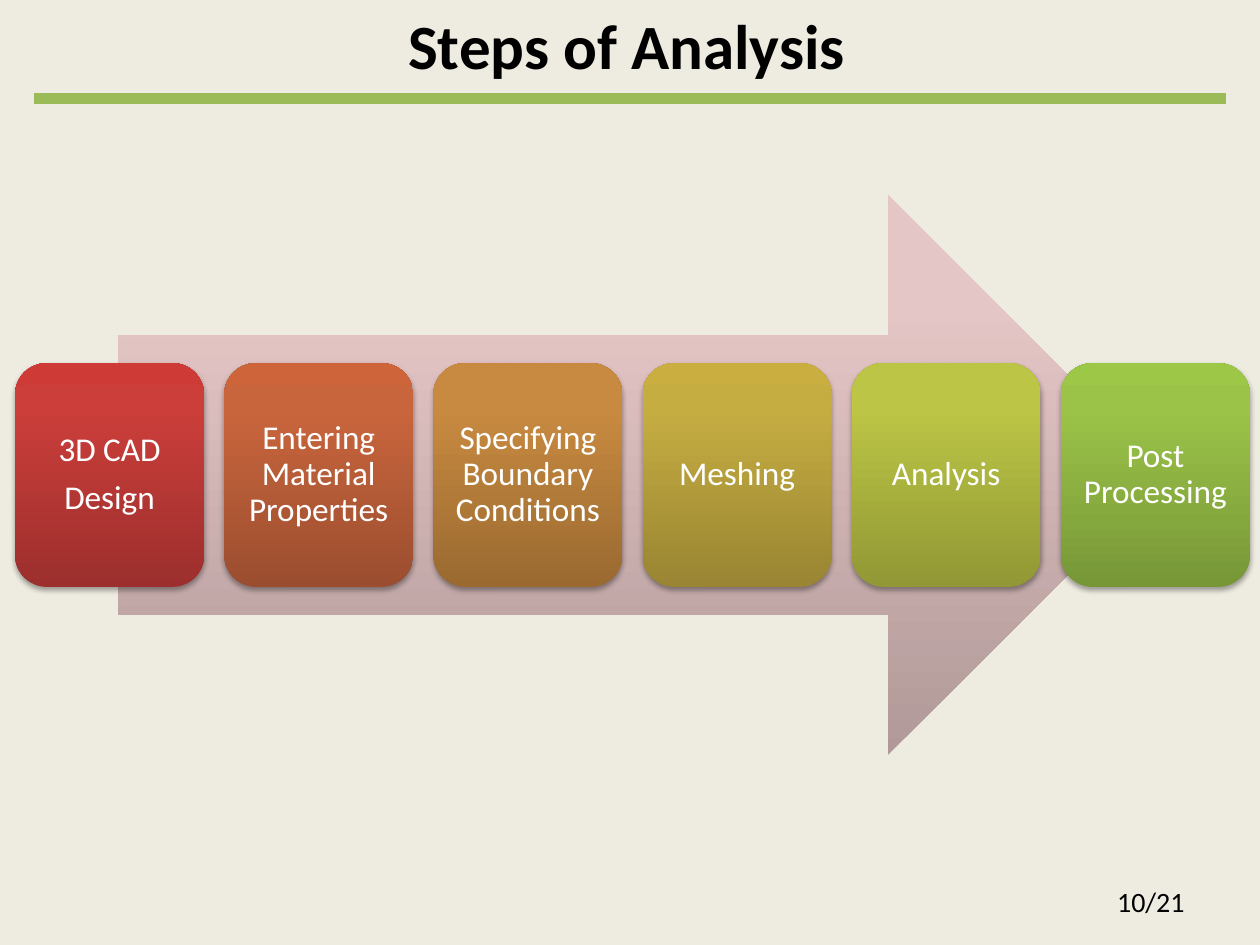
import pptx
import pptx.util
import pptx.dml.color
import pptx.enum.shapes
import pptx.enum.text
import pptx.oxml
import pptx.oxml.ns

Inches, Pt = pptx.util.Inches, pptx.util.Pt
SHAPES = pptx.enum.shapes.MSO_SHAPE
ALIGN = pptx.enum.text.PP_ALIGN
ANCHOR = pptx.enum.text.MSO_ANCHOR

WIDTH, HEIGHT = 10, 7.5
STEPS = [
    (["3D CAD", "Design"], ["9C2F2D", "CB3E3A", "CE3B37"]),
    (["Entering Material Properties"], ["9B4E2F", "C9653D", "CD643A"]),
    (["Specifying Boundary Conditions"], ["9A6A31", "C88A40", "CB8B3D"]),
    (["Meshing"], ["998533", "C6AD42", "CAAF40"]),
    (["Analysis"], ["919835", "BCC545", "BFC843"]),
    (["Post Processing"], ["779737", "9BC348", "9DC746"]),
]


def rgb(hex_code):
    return pptx.dml.color.RGBColor.from_string(hex_code)


def add_run(paragraph, text, size, color, bold=False):
    run = paragraph.add_run()
    run.text = text
    run.font.name = "Calibri"
    run.font.size = Pt(size)
    run.font.bold = bold
    run.font.color.rgb = rgb(color)


def drawing_xml(body):
    return pptx.oxml.parse_xml(body.replace(">", f" {pptx.oxml.ns.nsdecls('a')}>", 1))


def fill_upward(shape, colors):
    """Fill with a three-stop gradient that runs from bottom to top."""
    stops = "".join(
        f'<a:gs pos="{share * 1000}"><a:srgbClr val="{color}"/></a:gs>'
        for share, color in zip((0, 80, 100), colors)
    )
    gradient = drawing_xml(
        f'<a:gradFill rotWithShape="1"><a:gsLst>{stops}</a:gsLst>'
        '<a:lin ang="16200000" scaled="0"/></a:gradFill>'
    )
    shape._element.spPr.find(pptx.oxml.ns.qn("a:prstGeom")).addnext(gradient)
    shape.line.fill.background()
    shape.shadow.inherit = False


def add_soft_shadow(shape):
    effects = shape._element.spPr.find(pptx.oxml.ns.qn("a:effectLst"))
    effects.append(drawing_xml(
        f'<a:outerShdw blurRad="{Pt(3.1)}" dist="{Pt(1.8)}" dir="5400000" rotWithShape="0">'
        '<a:srgbClr val="000000"><a:alpha val="35000"/></a:srgbClr></a:outerShdw>'
    ))


def add_header(slide, left, top, width, height):
    title = slide.shapes.title
    title.left, title.top = Inches(left), Inches(top)
    title.width, title.height = Inches(width), Inches(height)
    frame = title.text_frame
    frame.auto_size = pptx.enum.text.MSO_AUTO_SIZE.NONE
    frame.vertical_anchor = ANCHOR.TOP
    frame.paragraphs[0].alignment = ALIGN.CENTER
    frame.paragraphs[0].space_before = Pt(0)
    add_run(frame.paragraphs[0], "Steps of Analysis", 36, "000000", bold=True)

    baseline = Inches(top + height)
    rule = slide.shapes.add_connector(
        pptx.enum.shapes.MSO_CONNECTOR.STRAIGHT,
        Inches(left), baseline, Inches(WIDTH - left), baseline)
    rule.line.color.rgb = rgb("9BBB59")
    rule.line.width = Pt(6)
    rule._element.spPr.append(drawing_xml("<a:effectLst></a:effectLst>"))


def add_step(slide, left, top, width, height, lines, colors):
    card = slide.shapes.add_shape(
        SHAPES.ROUNDED_RECTANGLE,
        Inches(left), Inches(top), Inches(width), Inches(height))
    fill_upward(card, colors)
    add_soft_shadow(card)
    frame = card.text_frame
    frame.word_wrap = True
    frame.vertical_anchor = ANCHOR.MIDDLE
    frame.margin_left = frame.margin_right = Inches(0.08)
    frame.margin_top = frame.margin_bottom = Inches(0.08)
    for index, line in enumerate(lines):
        paragraph = frame.add_paragraph() if index else frame.paragraphs[0]
        paragraph.alignment = ALIGN.CENTER
        paragraph.line_spacing = 0.9
        paragraph.space_after = Pt(6.65)
        add_run(paragraph, line, 19, "FFFFFF")


def add_process(slide, left, top, width, height):
    """Lay equal step cards over an arrow that spans 85% of the region."""
    arrow_inset = 0.82
    arrow = slide.shapes.add_shape(
        SHAPES.RIGHT_ARROW, Inches(left + arrow_inset), Inches(top),
        Inches(0.85 * width), Inches(height))
    fill_upward(arrow, ["B09998", "E5C6C6", "E6C7C6"])

    card_width, card_height = 1.5, 0.4 * height
    pitch = (width - card_width) / (len(STEPS) - 1)
    card_top = top + (height - card_height) / 2
    for column, (lines, colors) in enumerate(STEPS):
        add_step(slide, left + column * pitch, card_top,
                 card_width, card_height, lines, colors)


def add_page_number(slide, left, top, width, height):
    box = slide.shapes.add_textbox(
        Inches(left), Inches(top), Inches(width), Inches(height))
    frame = box.text_frame
    frame.word_wrap = True
    frame.vertical_anchor = ANCHOR.MIDDLE
    frame.paragraphs[0].alignment = ALIGN.RIGHT
    add_run(frame.paragraphs[0], "10/21", 16, "000000")


def main():
    deck = pptx.Presentation()
    deck.slide_width, deck.slide_height = Inches(WIDTH), Inches(HEIGHT)
    slide = deck.slides.add_slide(deck.slide_layouts.get_by_name("Title Only"))
    slide.background.fill.solid()
    slide.background.fill.fore_color.rgb = rgb("EEECE1")
    add_page_number(slide, 7.17, 6.95, 2.33, 0.4)
    add_process(slide, 0.12, 1.55, 9.8, 4.44)
    add_header(slide, 0.27, 0, 9.41, 0.78)
    deck.save("out.pptx")


if __name__ == "__main__":
    main()
